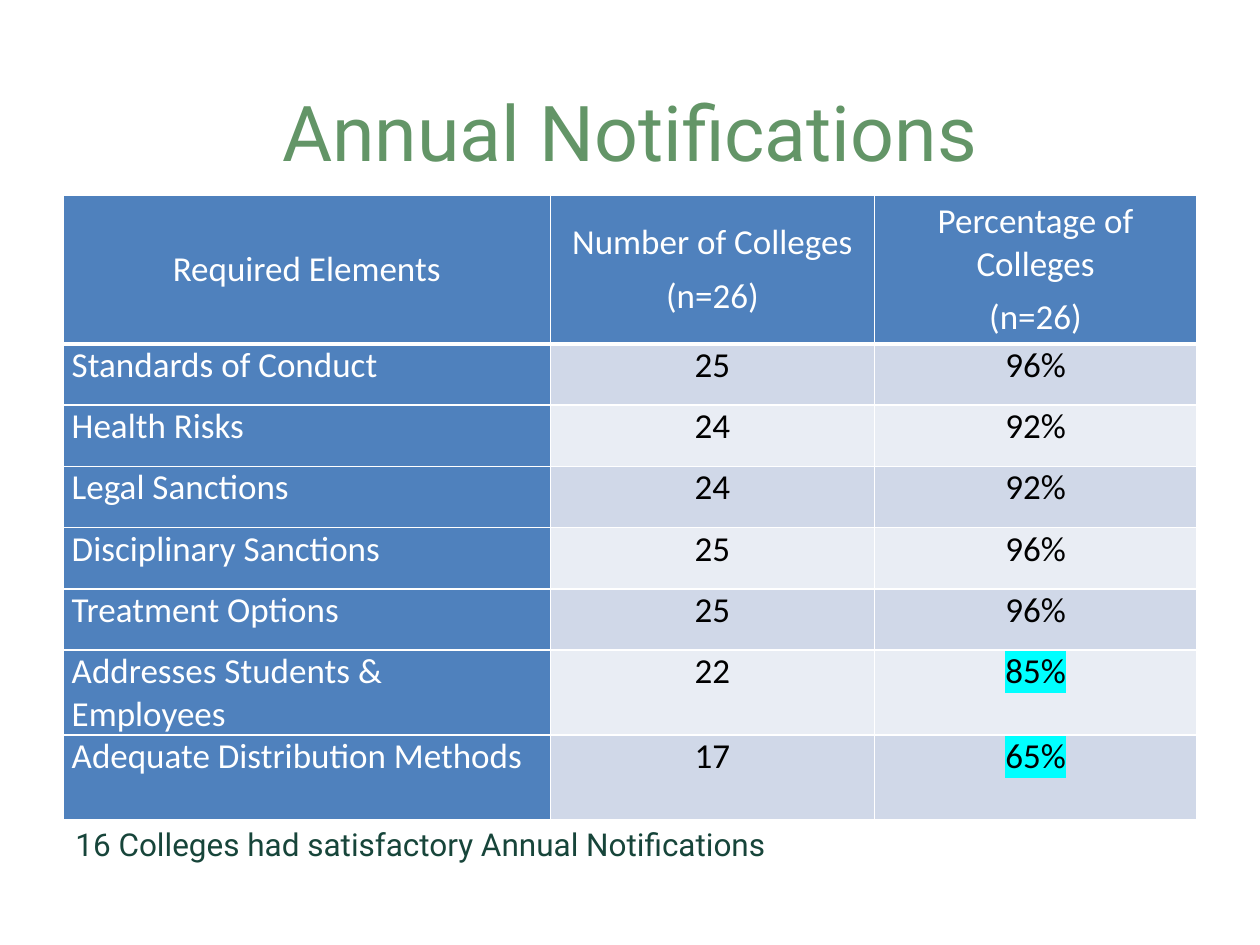
"""Build the Annual Notifications slide with its table of college results."""
from lxml.etree import SubElement
from pptx import Presentation
from pptx.dml.color import RGBColor
from pptx.enum.text import MSO_ANCHOR as Anchor, PP_ALIGN as Align
from pptx.oxml import parse_xml
from pptx.oxml.ns import nsdecls, qn
from pptx.util import Pt

TITLE = "Annual Notifications"
HEADERS = ["Required Elements", "Number of Colleges\n(n=26)", "Percentage of Colleges\n(n=26)"]
ROWS = [
    ("Standards of Conduct", "25", "96%"),
    ("Health Risks", "24", "92%"),
    ("Legal Sanctions", "24", "92%"),
    ("Disciplinary Sanctions", "25", "96%"),
    ("Treatment Options", "25", "96%"),
    ("Addresses Students & Employees", "22", "85%"),
    ("Adequate Distribution Methods", "17", "65%"),
]
LOW_RATES = {"85%", "65%"}
FOOTNOTE = "16 Colleges had satisfactory Annual Notifications"

WHITE = RGBColor(0xFF, 0xFF, 0xFF)
BLACK = RGBColor(0x00, 0x00, 0x00)
BLUE = RGBColor(0x4F, 0x81, 0xBD)
BANDS = [RGBColor(0xD0, 0xD8, 0xE8), RGBColor(0xE9, 0xED, 0xF4)]
GREEN = RGBColor(0x63, 0x95, 0x67)
DARK_GREEN = RGBColor(0x17, 0x45, 0x3A)
CYAN = RGBColor(0x00, 0xFF, 0xFF)

LEFT, WIDTH = 36, 648
TABLE_TOP = 111.6
COL_WIDTHS = [278.6, 185, 184.4]
ROW_HEIGHTS = [85] + [35] * 5 + [48.5] * 2


def style_font(font, name, size, color):
    font.name, font.size = name, Pt(size)
    font.color.rgb = color


def add_text(s, text, top, height, anchor, align, size, color):
    tf = s.shapes.add_textbox(Pt(LEFT), Pt(top), Pt(WIDTH), Pt(height)).text_frame
    tf.word_wrap = True
    tf.vertical_anchor = anchor
    tf.text = text
    p = tf.paragraphs[0]
    p.alignment = align
    style_font(p.runs[0].font, "Roboto", size, color)


def set_borders(cell, bottom):
    tc_pr = cell._tc.get_or_add_tcPr()
    for i, (side, width) in enumerate(zip("LRTB", (1, 1, 1, bottom))):
        tc_pr.insert(i, parse_xml(
            f'<a:ln{side} {nsdecls("a")} w="{Pt(width)}"><a:solidFill>'
            f'<a:srgbClr val="{WHITE}"/></a:solidFill></a:ln{side}>'))


def highlight(r, color):
    r_pr = r._r.get_or_add_rPr()
    mark = SubElement(r_pr, qn("a:highlight"))
    SubElement(mark, qn("a:srgbClr")).set("val", str(color))
    r_pr.find(qn("a:latin")).addprevious(mark)


def fill_cell(cell, text, row, col):
    is_header = row == 0
    is_label = is_header or col == 0
    cell.margin_left = cell.margin_right = Pt(5)
    cell.margin_top = cell.margin_bottom = Pt(0)
    cell.vertical_anchor = Anchor.MIDDLE if is_header else Anchor.TOP
    cell.fill.solid()
    cell.fill.fore_color.rgb = BLUE if is_label else BANDS[(row - 1) % 2]
    set_borders(cell, 3 if is_header else 1)
    cell.text_frame.text = text
    for i, p in enumerate(cell.text_frame.paragraphs):
        p.alignment = Align.CENTER if is_header or col else Align.LEFT
        p.space_before, p.space_after = Pt(3 if i else 0), Pt(3)
        r = p.runs[0]
        style_font(r.font, "Calibri", 20, WHITE if is_label else BLACK)
        r.font.bold = False
        if text in LOW_RATES:
            highlight(r, CYAN)


def add_results(s):
    data = [HEADERS, *ROWS]
    table = s.shapes.add_table(len(data), len(HEADERS), Pt(LEFT), Pt(TABLE_TOP),
                               Pt(WIDTH), Pt(sum(ROW_HEIGHTS))).table
    for column, width in zip(table.columns, COL_WIDTHS):
        column.width = Pt(width)
    for row, (texts, height) in enumerate(zip(data, ROW_HEIGHTS)):
        table.rows[row].height = Pt(height)
        for col, text in enumerate(texts):
            fill_cell(table.cell(row, col), text, row, col)


def main():
    prs = Presentation()
    prs.slide_width, prs.slide_height = Pt(720), Pt(540)
    s = prs.slides.add_slide(prs.slide_layouts[6])
    add_text(s, TITLE, 29.5, 90, Anchor.MIDDLE, Align.CENTER, 44, GREEN)
    add_results(s)
    add_text(s, FOOTNOTE, 468, 29, Anchor.TOP, Align.LEFT, 18, DARK_GREEN)
    prs.save("out.pptx")


if __name__ == "__main__":
    main()
